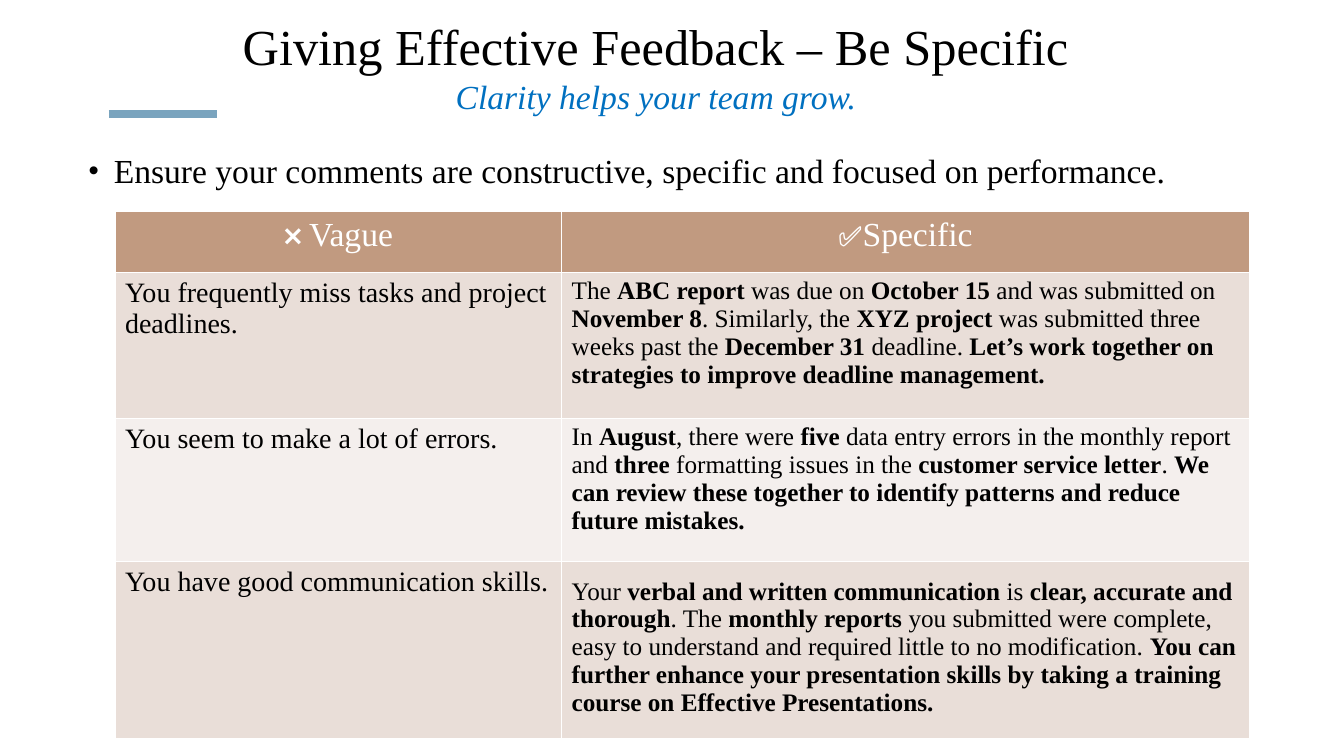
from pptx import Presentation
from pptx.util import Inches, Pt
from pptx.dml.color import RGBColor
from pptx.enum.shapes import MSO_CONNECTOR
from pptx.enum.text import MSO_ANCHOR, PP_ALIGN
from pptx.oxml.ns import qn
from lxml import etree

COLORS = {"black": "000000", "white": "FFFFFF", "blue": "0070C0", "accent": "7AA4BE",
          "header": "C19A80", "band": "E9DED8", "light": "F4EFED"}
SERIF = "Times New Roman"


def rgb(name):
    return RGBColor.from_string(COLORS[name])


def add_run(p, text, size, color="black", font=SERIF, bold=False, italic=False):
    r = p.add_run()
    r.text = text
    r.font.name, r.font.size = font, Pt(size)
    r.font.bold, r.font.italic = bold, italic
    r.font.color.rgb = rgb(color)


prs = Presentation()
prs.slide_width, prs.slide_height = Inches(13.33), Inches(7.5)
s = prs.slides.add_slide(prs.slide_layouts[6])

# Accent line
line = s.shapes.add_connector(MSO_CONNECTOR.STRAIGHT, Inches(1.08), Inches(1.13),
                              Inches(2.15), Inches(1.13))
line.line.color.rgb = rgb("accent")
line.line.width = Pt(6)
etree.SubElement(line._element.spPr, qn("a:effectLst"))

# Title and subtitle
sp = s.shapes.add_textbox(Inches(1.99), Inches(0.09), Inches(9.03), Inches(1.12))
tf = sp.text_frame
tf.word_wrap = True
tf.vertical_anchor = MSO_ANCHOR.MIDDLE
p = tf.paragraphs[0]
p.alignment = PP_ALIGN.CENTER
add_run(p, "Giving Effective Feedback – Be Specific", 36)
p.add_line_break()
add_run(p, "Clarity helps your team grow.", 24, "blue", italic=True)

# Bullet
sp = s.shapes.add_textbox(Inches(0.78), Inches(1.34), Inches(11.78), Inches(0.62))
tf = sp.text_frame
tf.word_wrap = True
tf.vertical_anchor = MSO_ANCHOR.MIDDLE
p = tf.paragraphs[0]
p.line_spacing = 1.2
pPr = p._p.get_or_add_pPr()
pPr.set("marL", str(Inches(0.25)))
pPr.set("indent", str(-Inches(0.25)))
etree.SubElement(pPr, qn("a:buSzPct"), val="87000")
etree.SubElement(pPr, qn("a:buFont"), typeface="Arial")
etree.SubElement(pPr, qn("a:buChar"), char="•")
add_run(p, "Ensure your comments are constructive, specific and focused on performance.", 24)

# Table: asterisks enclose bold passages
headers = [("❌ ", "Vague"), ("✅", "Specific")]
examples = [
    ("You frequently miss tasks and project deadlines.",
     "The *ABC report *was due on *October 15 *and was submitted on *November 8*. "
     "Similarly, the *XYZ project *was submitted three weeks past the *December 31 *deadline. "
     "*Let’s work together on strategies to improve deadline management."),
    ("You seem to make a lot of errors.",
     "In *August*, there were *five* data entry errors in the monthly report and *three* "
     "formatting issues in the *customer service letter*. *We can review these together "
     "to identify patterns and reduce future mistakes."),
    ("You have good communication skills.",
     "Your *verbal and written communication *is *clear, accurate and thorough*. "
     "The *monthly reports *you submitted were complete, easy to understand and required "
     "little to no modification. *You can further enhance your presentation skills by "
     "taking a training course on Effective Presentations."),
]
table = s.shapes.add_table(4, 2, Inches(1.14), Inches(2.1),
                           Inches(11.25), Inches(5.23)).table
for col, width in zip(table.columns, (4.43, 6.82)):
    col.width = Inches(width)
for row, height in zip(table.rows, (0.6, 1.45, 1.42, 1.76)):
    row.height = Inches(height)
for i, fill in enumerate(("header", "band", "light", "band")):
    for cell in table.rows[i].cells:
        cell.fill.solid()
        cell.fill.fore_color.rgb = rgb(fill)

for j, (symbol, label) in enumerate(headers):
    p = table.cell(0, j).text_frame.paragraphs[0]
    p.alignment = PP_ALIGN.CENTER
    add_run(p, symbol, 20, "white", "Karla")
    add_run(p, label, 24, "white")

for i, (vague, specific) in enumerate(examples, 1):
    add_run(table.cell(i, 0).text_frame.paragraphs[0], vague, 20)
    p = table.cell(i, 1).text_frame.paragraphs[0]
    for k, part in enumerate(specific.split("*")):
        add_run(p, part, 18, bold=k % 2 == 1)
table.cell(3, 1).margin_top = Inches(0.16)

prs.save("out.pptx")
